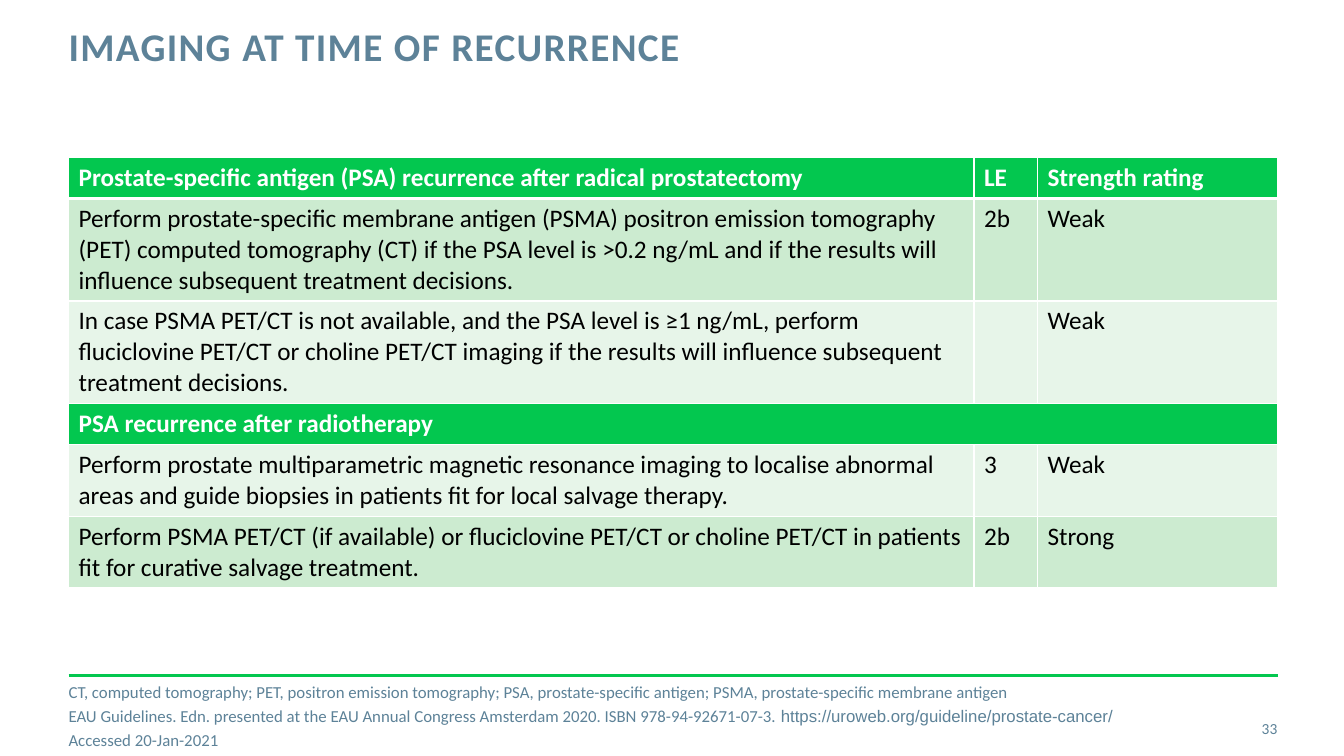
from lxml import etree
from pptx import Presentation
from pptx.dml.color import RGBColor
from pptx.enum.shapes import MSO_CONNECTOR
from pptx.enum.text import MSO_ANCHOR as Anchor, MSO_AUTO_SIZE as AutoSize, PP_ALIGN as Align
from pptx.oxml.ns import qn
from pptx.util import Emu, Pt

GREEN = RGBColor(0x03, 0xC7, 0x4F)
MID_GREEN = RGBColor(0xCC, 0xEB, 0xD0)
PALE_GREEN = RGBColor(0xE7, 0xF5, 0xE9)
SLATE = RGBColor(0x5D, 0x82, 0x98)
WHITE = RGBColor(0xFF, 0xFF, 0xFF)
BLACK = RGBColor(0, 0, 0)

TITLE = "IMAGING AT TIME OF RECURRENCE"
# Row fill, row height in px, cell texts; a single text spans the whole row
RECOMMENDATIONS = [
    (GREEN, 41, ["Prostate-specific antigen (PSA) recurrence after radical prostatectomy",
                 "LE", "Strength rating"]),
    (MID_GREEN, 101, ["Perform prostate-specific membrane antigen (PSMA) positron emission "
                      "tomography (PET) computed tomography (CT) if the PSA level is >0.2 ng/mL "
                      "and if the results will influence subsequent treatment decisions.",
                      "2b", "Weak"]),
    (PALE_GREEN, 101, ["In case PSMA PET/CT is not available, and the PSA level is ≥1 ng/mL, "
                       "perform fluciclovine PET/CT or choline PET/CT imaging if the results "
                       "will influence subsequent treatment decisions.", "", "Weak"]),
    (GREEN, 41, ["PSA recurrence after radiotherapy"]),
    (PALE_GREEN, 71, ["Perform prostate multiparametric magnetic resonance imaging to localise "
                      "abnormal areas and guide biopsies in patients fit for local salvage "
                      "therapy.", "3", "Weak"]),
    (MID_GREEN, 71, ["Perform PSMA PET/CT (if available) or fluciclovine PET/CT or choline "
                     "PET/CT in patients fit for curative salvage treatment.", "2b", "Strong"]),
]
# Paragraphs of (text, font) runs
FOOTNOTES = [
    [("CT, computed tomography; PET, positron emission tomography; PSA, prostate-specific "
      "antigen; PSMA, prostate-specific membrane antigen", "Calibri")],
    [("EAU Guidelines. Edn. presented at the EAU Annual Congress Amsterdam 2020. "
      "ISBN 978-94-92671-07-3. ", "Calibri"),
     ("https://uroweb.org/guideline/prostate-cancer/", "Arial")],
    [("Accessed 20-Jan-2021", "Calibri")],
]
PAGE_NUMBER = "33"

SCALE = 9144  # EMU per px, 100 px to the inch
LEFT = 68
COLUMNS = [898, 63, 238]


def px(length):
    return Emu(length * SCALE)


def place(shape, left, top, width, height):
    shape.left, shape.top, shape.width, shape.height = map(px, (left, top, width, height))


def frame_of(shape, anchor):
    """Return the shape's text frame, wrapped and without margins."""
    frame = shape.text_frame
    frame.word_wrap, frame.auto_size, frame.vertical_anchor = True, AutoSize.NONE, anchor
    frame.margin_left = frame.margin_top = frame.margin_right = frame.margin_bottom = 0
    return frame


def write(paragraph, runs, size, color, bold=False, align=Align.LEFT, before=0,
          line=None, tracking=0):
    """Fill a paragraph with one text, or with (text, font) runs."""
    paragraph.alignment, paragraph.space_before = align, Pt(before)
    if line:
        paragraph.line_spacing = Pt(line)
    for text, font_name in [(runs, "Calibri")] if isinstance(runs, str) else runs:
        run = paragraph.add_run()
        run.text = text
        font = run.font
        font.name, font.size, font.bold = font_name, Pt(size), bold
        font.color.rgb = color
        if tracking:
            run._r.get_or_add_rPr().set("spc", str(tracking * 100))


def set_borders(cell, **widths):
    tc_pr = cell._tc.get_or_add_tcPr()
    for side in "LRTB":
        border = etree.SubElement(tc_pr, qn(f"a:ln{side}"), w=str(Pt(widths.get(side, 1))))
        fill = etree.SubElement(border, qn("a:solidFill"))
        etree.SubElement(fill, qn("a:srgbClr"), val=str(WHITE))


def add_recommendations(slide):
    heights = [height for _, height, _ in RECOMMENDATIONS]
    table = slide.shapes.add_table(len(heights), len(COLUMNS), px(LEFT), px(156),
                                   px(sum(COLUMNS)), px(sum(heights))).table
    for column, width in zip(table.columns, COLUMNS):
        column.width = px(width)
    for r, (color, height, texts) in enumerate(RECOMMENDATIONS):
        table.rows[r].height = px(height)
        heading = color == GREEN
        for c in range(len(COLUMNS)):
            cell = table.cell(r, c)
            set_borders(cell, B=3 if r == 0 else 1, T=3 if r == 1 else 1)
            cell.fill.solid()
            cell.fill.fore_color.rgb = color
            if c < len(texts) and texts[c]:
                write(cell.text_frame.paragraphs[0], texts[c], 18,
                      WHITE if heading else BLACK, bold=heading)
            else:
                cell.text_frame.paragraphs[0].font.size = Pt(18)
        if len(texts) == 1:
            table.cell(r, 0).merge(table.cell(r, len(COLUMNS) - 1))


def add_footer(slide, body):
    rule = slide.shapes.add_connector(MSO_CONNECTOR.STRAIGHT, px(LEFT), px(670),
                                      px(1268), px(670))
    rule.line.color.rgb, rule.line.width = GREEN, Pt(2)
    etree.SubElement(rule._element.spPr, qn("a:effectLst"))

    place(body, LEFT, 690, 1103, 40)
    notes = frame_of(body, Anchor.MIDDLE)
    for i, runs in enumerate(FOOTNOTES):
        paragraph = notes.add_paragraph() if i else notes.paragraphs[0]
        p_pr = paragraph._p.get_or_add_pPr()
        p_pr.set("marL", "0")
        p_pr.set("indent", "0")
        etree.SubElement(p_pr, qn("a:buNone"))
        write(paragraph, runs, 12, SLATE, before=3 if i else 0)

    number = slide.shapes.add_textbox(px(1181), px(703), px(86), px(40))
    write(frame_of(number, Anchor.MIDDLE).paragraphs[0], PAGE_NUMBER, 11, SLATE,
          align=Align.RIGHT)


def main():
    deck = Presentation()
    deck.slide_width, deck.slide_height = px(1333), px(750)
    slide = deck.slides.add_slide(deck.slide_layouts[1])
    title, body = slide.placeholders
    place(title, LEFT, 27, 956, 88)
    write(frame_of(title, Anchor.TOP).paragraphs[0], TITLE, 28, SLATE, bold=True,
          line=30, tracking=1)
    add_recommendations(slide)
    add_footer(slide, body)
    deck.save("out.pptx")


if __name__ == "__main__":
    main()
